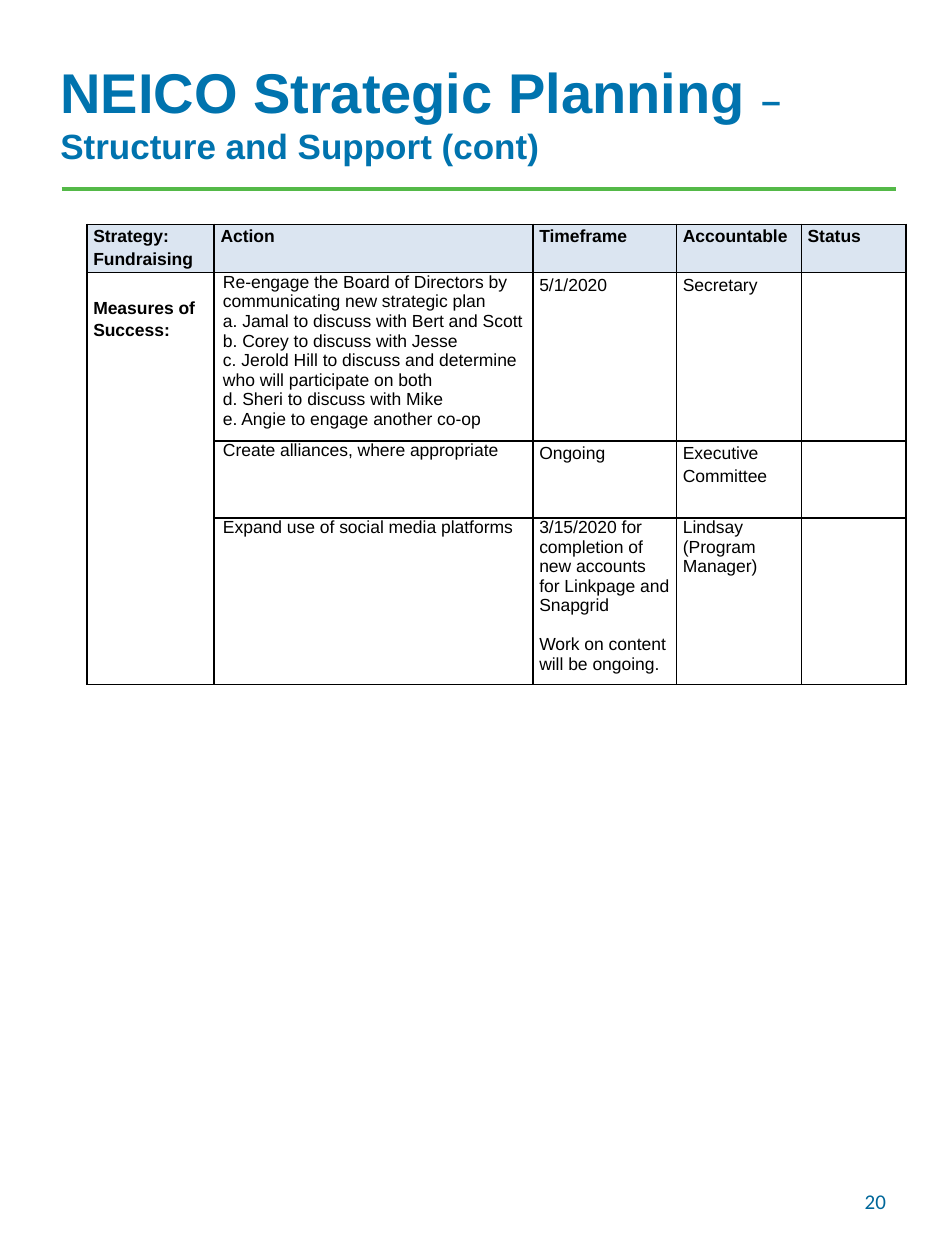
from dataclasses import dataclass
from typing import Any

from lxml.etree import SubElement
from pptx import Presentation
from pptx.dml.color import RGBColor
from pptx.enum.shapes import MSO_CONNECTOR
from pptx.enum.text import MSO_ANCHOR, PP_ALIGN
from pptx.oxml.ns import qn
from pptx.util import Inches, Pt


@dataclass(frozen=True)
class Theme:
    blue: str = "0073AE"
    navy: str = "00679A"
    green: str = "54B948"
    black: str = "000000"
    pale: str = "DBE5F1"
    font: str = "Arial"
    alt: str = "Calibri"
    head: int = 32
    sub: int = 20
    page: int = 12
    body: int = 10


@dataclass(frozen=True)
class Item:
    """Text of one table cell, a line for each paragraph."""
    text: str = ""
    bold: bool = False
    lead: float = 1.15
    side: float = 0.05
    top: float = 0
    gap: float = 0  # points before each later paragraph


LOOK = Theme()
COLS = (1.01, 2.53, 1.14, 0.99, 0.83)
ROWS = (0.36, 1.24, 0.61, 1.24)


def action(text: str) -> Item:
    return Item(text, lead=1, side=0.07)


HEADS = ("Strategy:\nFundraising", "Action", "Timeframe", "Accountable", "Status")
GOAL = Item("Measures of Success:", bold=True, top=0.18)
GRID = (
    tuple(Item(name, bold=True) for name in HEADS),
    (GOAL,
     action("Re-engage the Board of Directors by communicating new strategic plan\n"
            "a. Jamal to discuss with Bert and Scott\n"
            "b. Corey to discuss with Jesse\n"
            "c. Jerold Hill to discuss and determine who will participate on both\n"
            "d. Sheri to discuss with Mike\n"
            "e. Angie to engage another co-op"),
     Item("5/1/2020"), Item("Secretary"), Item()),
    (Item(), action("Create alliances, where appropriate"),
     Item("Ongoing"), Item("Executive Committee"), Item()),
    (Item(), action("Expand use of social media platforms"),
     Item("3/15/2020 for completion of new accounts for Linkpage and Snapgrid\n"
          "Work on content will be ongoing.", lead=1, gap=11.2),
     Item("Lindsay (Program Manager)", lead=1), Item()),
)


def write(para: Any, text: str, *, size: float = LOOK.body, color: str = LOOK.black,
          font: str = LOOK.font, bold: bool = False) -> None:
    run = para.add_run()
    run.text = text
    run.font.size = Pt(size)
    run.font.name = font
    run.font.bold = bold
    run.font.color.rgb = RGBColor.from_string(color)


def add_box(slide: Any, left: float, top: float, width: float, height: float) -> Any:
    frame = slide.shapes.add_textbox(
        Inches(left), Inches(top), Inches(width), Inches(height)).text_frame
    frame.word_wrap = True
    frame.vertical_anchor = MSO_ANCHOR.MIDDLE
    return frame.paragraphs[0]


def add_rule(slide: Any, left: float, right: float, top: float) -> None:
    rule = slide.shapes.add_connector(
        MSO_CONNECTOR.STRAIGHT, Inches(left), Inches(top), Inches(right), Inches(top))
    rule.line.color.rgb = RGBColor.from_string(LOOK.green)
    rule.line.width = Pt(2)
    SubElement(rule._element.spPr, qn("a:effectLst"))


def style(cell: Any, shade: bool) -> None:
    # Borders come before the fill in the cell properties
    props = cell._tc.get_or_add_tcPr()
    for side in ("lnL", "lnR", "lnT", "lnB"):
        edge = SubElement(props, qn(f"a:{side}"), w=str(Pt(1)))
        fill = SubElement(edge, qn("a:solidFill"))
        SubElement(fill, qn("a:srgbClr"), val=LOOK.black)
    if shade:
        cell.fill.solid()
        cell.fill.fore_color.rgb = RGBColor.from_string(LOOK.pale)
    else:
        cell.fill.background()


def fill_cell(cell: Any, item: Item) -> None:
    cell.margin_left = cell.margin_right = Inches(item.side)
    cell.margin_top, cell.margin_bottom = Inches(item.top), 0
    if not item.text:
        return
    frame = cell.text_frame
    for num, line in enumerate(item.text.split("\n")):
        para = frame.add_paragraph() if num else frame.paragraphs[0]
        para.line_spacing = item.lead
        if num and item.gap:
            para.space_before = Pt(item.gap)
        write(para, line, bold=item.bold)


def add_grid(slide: Any, left: float, top: float) -> None:
    table = slide.shapes.add_table(
        len(ROWS), len(COLS), Inches(left), Inches(top),
        Inches(sum(COLS)), Inches(sum(ROWS))).table
    table.first_row = table.horz_banding = False
    for col, width in zip(table.columns, COLS):
        col.width = Inches(width)
    for row, height in zip(table.rows, ROWS):
        row.height = Inches(height)
    for r, items in enumerate(GRID):
        for c, item in enumerate(items):
            cell = table.cell(r, c)
            style(cell, shade=r == 0)
            fill_cell(cell, item)
    table.cell(1, 0).merge(table.cell(len(ROWS) - 1, 0))


def main() -> None:
    deck = Presentation()
    deck.slide_width, deck.slide_height = Inches(7.5), Inches(10)
    slide = deck.slides.add_slide(deck.slide_layouts[6])

    # Rule and page number
    add_rule(slide, 0.49, 7.11, 1.5)
    page = add_box(slide, 6.68, 9.27, 0.45, 0.53)
    page.alignment = PP_ALIGN.RIGHT
    write(page, "20", size=LOOK.page, color=LOOK.navy, font=LOOK.alt)

    # Title
    title = add_box(slide, 0.38, 0, 7.12, 1.78)
    write(title, "NEICO Strategic Planning ", size=LOOK.head, color=LOOK.blue, bold=True)
    write(title, "– Structure and Support (cont)", size=LOOK.sub, color=LOOK.blue, bold=True)

    # Strategy table
    add_grid(slide, 0.69, 1.78)
    deck.save("out.pptx")


if __name__ == "__main__":
    main()
